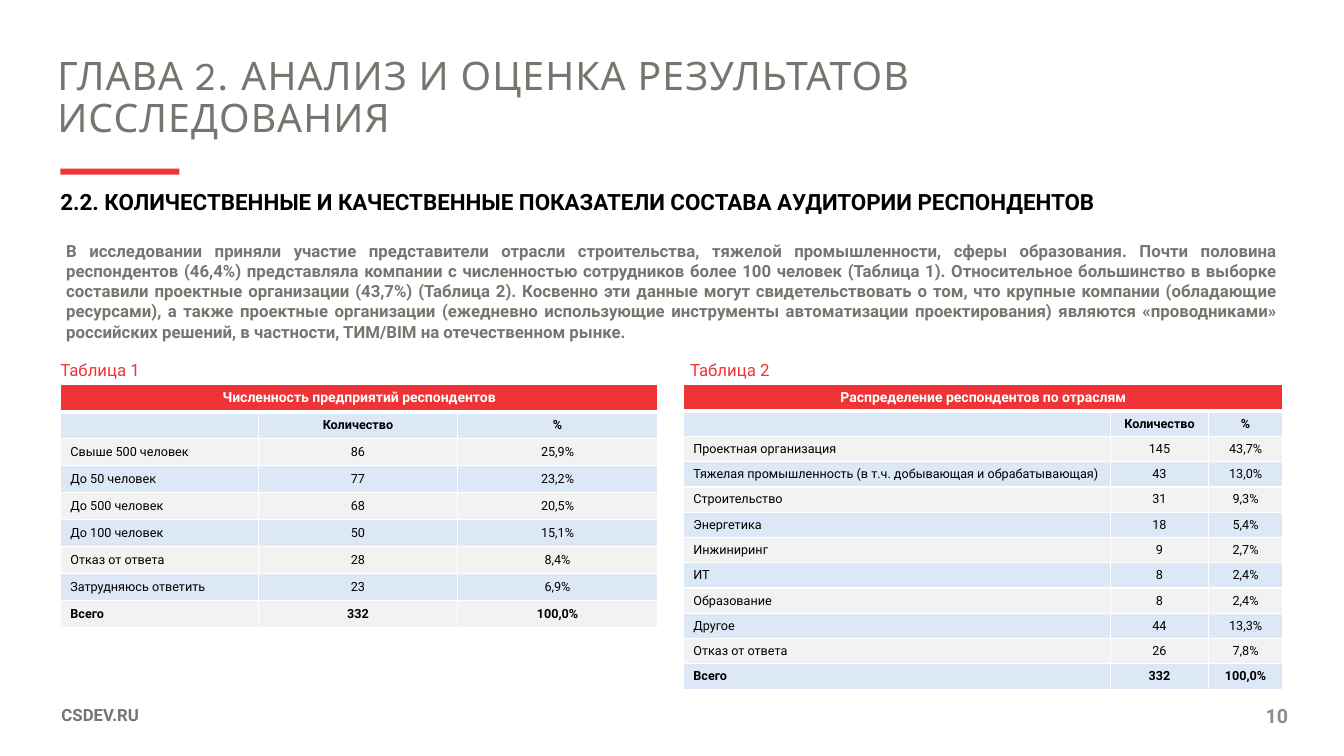
from lxml import etree
from pptx import Presentation
from pptx.dml.color import RGBColor
from pptx.enum.shapes import MSO_SHAPE
from pptx.enum.text import MSO_ANCHOR, MSO_AUTO_SIZE, PP_ALIGN
from pptx.oxml.ns import qn
from pptx.util import Cm, Pt

LEFT, CENTER, RIGHT, JUSTIFY = PP_ALIGN.LEFT, PP_ALIGN.CENTER, PP_ALIGN.RIGHT, PP_ALIGN.JUSTIFY
TOP, MIDDLE = MSO_ANCHOR.TOP, MSO_ANCHOR.MIDDLE
NO_AUTOFIT = MSO_AUTO_SIZE.NONE
RECTANGLE = MSO_SHAPE.RECTANGLE

COLORS = {
    "red": "EE3437", "text": "76766F", "black": "000000", "white": "FFFFFF",
    "page": "8C8C8C", "blue_row": "DCE8F6", "gray_row": "F2F2F2",
}

# Content
TITLE = "ГЛАВА 2. АНАЛИЗ И ОЦЕНКА РЕЗУЛЬТАТОВ ИССЛЕДОВАНИЯ"
SUBTITLE = "2.2. КОЛИЧЕСТВЕННЫЕ И КАЧЕСТВЕННЫЕ ПОКАЗАТЕЛИ СОСТАВА АУДИТОРИИ РЕСПОНДЕНТОВ"
SUMMARY = (
    "В исследовании приняли участие представители отрасли строительства, тяжелой "
    "промышленности, сферы образования. Почти половина респондентов (46,4%) представляла "
    "компании с численностью сотрудников более 100 человек (Таблица 1). Относительное "
    "большинство в выборке составили проектные организации (43,7%) (Таблица 2). Косвенно эти "
    "данные могут свидетельствовать о том, что крупные компании (обладающие ресурсами), а также "
    "проектные организации (ежедневно использующие инструменты автоматизации проектирования) "
    "являются «проводниками» российских решений, в частности, ТИМ/BIM на отечественном рынке."
)
SITE = "CSDEV.RU"
PAGE_NUMBER = "10"
COLUMN_HEADS = ("", "Количество", "%")
TABLES = [
    {
        "caption": "Таблица 1", "caption_left": 1.27, "left": 1.52,
        "widths": (5.0, 5.0, 5.06), "head_height": 0.7, "row_height": 0.68,
        "heading": "Численность предприятий респондентов",
        "rows": [
            ("Свыше 500 человек", "86", "25,9%"),
            ("До 50 человек", "77", "23,2%"),
            ("До 500 человек", "68", "20,5%"),
            ("До 100 человек", "50", "15,1%"),
            ("Отказ от ответа", "28", "8,4%"),
            ("Затрудняюсь ответить", "23", "6,9%"),
            ("Всего", "332", "100,0%"),
        ],
    },
    {
        "caption": "Таблица 2", "caption_left": 17.14, "left": 17.22,
        "widths": (10.77, 2.46, 1.88), "head_height": 0.66, "row_height": 0.62,
        "heading": "Распределение респондентов по отраслям",
        "rows": [
            ("Проектная организация", "145", "43,7%"),
            ("Тяжелая промышленность (в т.ч. добывающая и обрабатывающая)", "43", "13,0%"),
            ("Строительство", "31", "9,3%"),
            ("Энергетика", "18", "5,4%"),
            ("Инжиниринг", "9", "2,7%"),
            ("ИТ", "8", "2,4%"),
            ("Образование", "8", "2,4%"),
            ("Другое", "44", "13,3%"),
            ("Отказ от ответа", "26", "7,8%"),
            ("Всего", "332", "100,0%"),
        ],
    },
]
TABLE_TOP, CAPTION_TOP = 9.68, 8.94


def rgb(name):
    return RGBColor.from_string(COLORS[name])


def format_paragraph(paragraph, size, color, bold=False, align=LEFT, font="Roboto", spacing=None):
    paragraph.alignment = align
    if spacing:
        paragraph.line_spacing = spacing
    paragraph.font.name = font
    paragraph.font.size = Pt(size)
    paragraph.font.bold = bold
    paragraph.font.color.rgb = rgb(color)


def add_text(slide, text, box, size, color, margin=True, **style):
    frame = slide.shapes.add_textbox(*map(Cm, box)).text_frame
    frame.word_wrap = True
    if not margin:
        frame.margin_left = frame.margin_right = frame.margin_top = frame.margin_bottom = 0
    frame.text = text
    format_paragraph(frame.paragraphs[0], size, color, **style)


def add_borders(cell, widths):
    properties = cell._tc.get_or_add_tcPr()
    for side, width in widths.items():
        line = etree.SubElement(properties, qn("a:ln" + side), w=str(Pt(width)))
        fill = etree.SubElement(line, qn("a:solidFill"))
        etree.SubElement(fill, qn("a:srgbClr"), val=COLORS["white"])


def add_survey_table(slide, survey):
    rows = [(survey["heading"], "", ""), COLUMN_HEADS] + survey["rows"]
    heights = [survey["head_height"]] + [survey["row_height"]] * (len(rows) - 1)
    table = slide.shapes.add_table(
        len(rows), len(COLUMN_HEADS), Cm(survey["left"]), Cm(TABLE_TOP),
        Cm(sum(survey["widths"])), Cm(sum(heights))).table
    table.first_row = table.horz_banding = False
    for column, width in zip(table.columns, survey["widths"]):
        column.width = Cm(width)

    for r, values in enumerate(rows):
        table.rows[r].height = Cm(heights[r])
        heading = r == 0
        row_fill = "red" if heading else "blue_row" if r % 2 else "gray_row"
        bold = r < 2 or r == len(rows) - 1
        for c, value in enumerate(values):
            cell = table.cell(r, c)
            add_borders(cell, {"L": 1, "R": 1, "T": 3 if r == 1 else 1, "B": 3 if heading else 1})
            cell.fill.solid()
            cell.fill.fore_color.rgb = rgb(row_fill)
            cell.vertical_anchor = MIDDLE
            cell.text = value
            paragraph = cell.text_frame.paragraphs[0]
            format_paragraph(paragraph, 10 if heading else 9, "white" if heading else "black",
                             bold=bold, align=CENTER if heading or c else LEFT)
            if not value:
                paragraph._p.get_or_add_endParaRPr().set("sz", "900")
    table.cell(0, 0).merge(table.cell(0, len(COLUMN_HEADS) - 1))


def main():
    deck = Presentation()
    deck.slide_width, deck.slide_height = Cm(33.87), Cm(19.05)
    slide = deck.slides.add_slide(deck.slide_layouts[5])

    # Title and accent bar
    title = slide.shapes.title
    title.left, title.top, title.width, title.height = map(Cm, (1.19, 1.3, 29.62, 0.79))
    frame = title.text_frame
    frame.text = TITLE
    frame.word_wrap = True
    frame.auto_size = NO_AUTOFIT
    frame.vertical_anchor = TOP
    format_paragraph(frame.paragraphs[0], 28, "text", font="League Spartan", spacing=0.9)
    frame.paragraphs[0].runs[0]._r.get_or_add_rPr().set("spc", "80")

    bar = slide.shapes.add_shape(RECTANGLE, *map(Cm, (1.52, 4.25, 3.0, 0.15)))
    bar.shadow.inherit = False
    bar.fill.solid()
    bar.fill.fore_color.rgb = rgb("red")
    bar.line.fill.background()

    # Section heading and summary
    add_text(slide, SUBTITLE, (1.27, 4.7, 29.57, 0.74), 16, "black", bold=True, spacing=0.9)
    add_text(slide, SUMMARY, (1.42, 5.94, 31.04, 2.54), 12, "text", bold=True, align=JUSTIFY)

    # Tables with captions
    for survey in TABLES:
        add_survey_table(slide, survey)
        add_text(slide, survey["caption"], (survey["caption_left"], CAPTION_TOP, 2.69, 0.79),
                 12, "red", align=JUSTIFY)

    # Footer
    add_text(slide, SITE, (1.3, 17.7, 3.38, 0.69), 12, "text", bold=True, spacing=0.9)
    add_text(slide, PAGE_NUMBER, (31.62, 17.73, 0.84, 0.71), 14, "page",
             margin=False, bold=True, align=RIGHT)

    deck.save("out.pptx")


if __name__ == "__main__":
    main()
